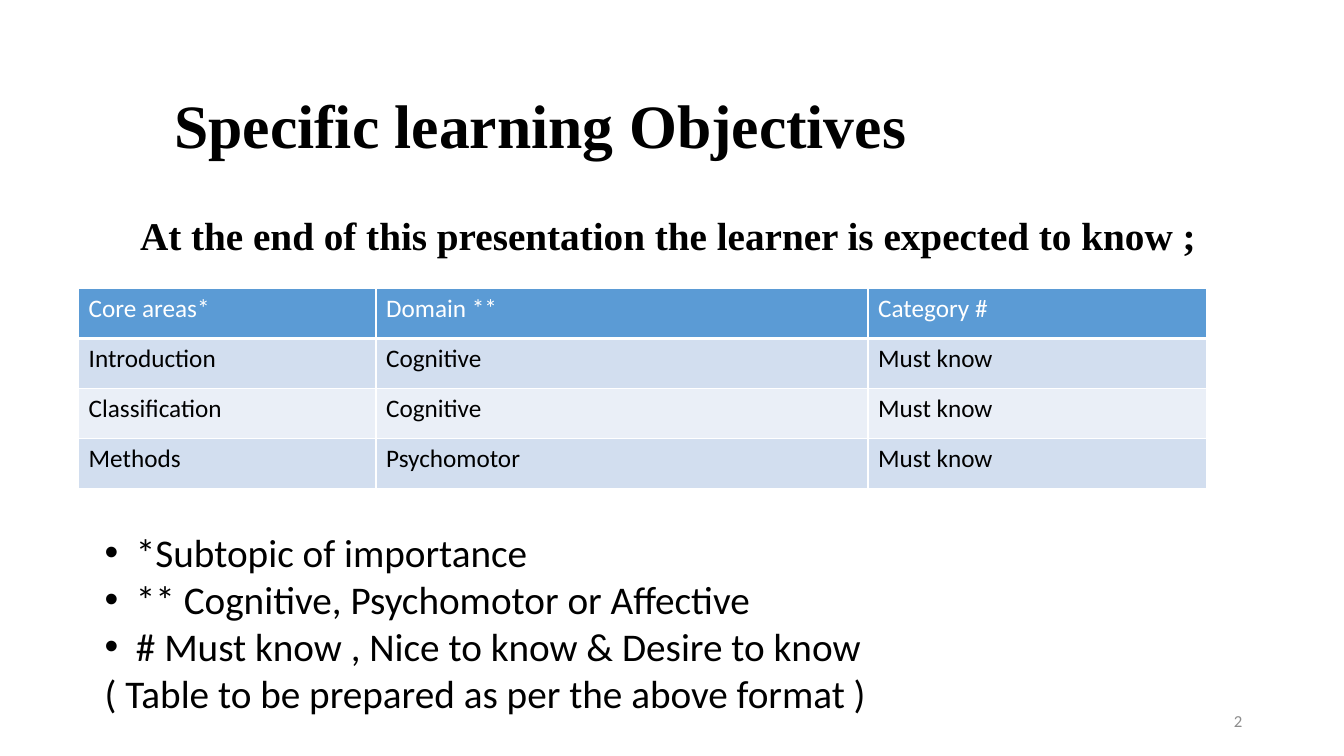
from lxml import etree
from pptx import Presentation
from pptx.dml.color import RGBColor
from pptx.enum import text
from pptx.oxml import ns
from pptx.util import Inches, Pt

BLACK = RGBColor(0x00, 0x00, 0x00)
WHITE = RGBColor(0xFF, 0xFF, 0xFF)
GREY = RGBColor(0x8C, 0x8C, 0x8C)
BLUE = RGBColor(0x5B, 0x9B, 0xD5)
BANDS = (RGBColor(0xD2, 0xDE, 0xEF), RGBColor(0xEA, 0xEF, 0xF7))

SERIF = "Times New Roman"
SANS = "Calibri"
MID = text.MSO_ANCHOR.MIDDLE
TOP = text.MSO_ANCHOR.TOP

WIDTHS = (2.95, 4.88, 3.36)
ROWS = (
    ("Core areas*", "Domain **", "Category #"),
    ("Introduction", "Cognitive", "Must know"),
    ("Classification", "Cognitive", "Must know"),
    ("Methods", "Psychomotor", "Must know"),
)
NOTES = (
    "*Subtopic of importance",
    "** Cognitive, Psychomotor or Affective",
    "# Must know , Nice to know & Desire to know",
)
CLOSE = "( Table to be prepared as per the above format )"


def style(para, size, name=SANS, color=BLACK, bold=False):
    for key, value in {"size": Pt(size), "name": name, "bold": bold}.items():
        setattr(para.font, key, value)
    para.font.color.rgb = color


def add_text(slide, box, lines, anchor=TOP, bullets=0, look=None, form=None):
    """Place a text box; the first `bullets` lines get a bullet."""
    shape = slide.shapes.add_textbox(*map(Inches, box))
    frame = shape.text_frame
    frame.word_wrap = True
    frame.vertical_anchor = anchor
    for i, line in enumerate(lines):
        para = frame.paragraphs[0] if i == 0 else frame.add_paragraph()
        para.text = line
        if i < bullets:
            props = para._p.get_or_add_pPr()
            props.set("marL", str(Inches(0.31)))
            props.set("indent", str(-Inches(0.31)))
            etree.SubElement(props, ns.qn("a:buFont"), typeface="Arial")
            etree.SubElement(props, ns.qn("a:buChar"), char="•")
        for key, value in (form or {}).items():
            setattr(para, key, value)
        style(para, **look)


def add_edges(cell, head):
    """Rule a cell in white, thicker where the header meets the body."""
    props = cell._tc.get_or_add_tcPr()
    for i, side in enumerate(("lnL", "lnR", "lnT", "lnB")):
        thick = side == "lnB" and head
        line = etree.Element(ns.qn(f"a:{side}"), w=str(Pt(3 if thick else 1)))
        fill = etree.SubElement(line, ns.qn("a:solidFill"))
        etree.SubElement(fill, ns.qn("a:srgbClr"), val=str(WHITE))
        props.insert(i, line)


def add_grid(slide, box):
    frame = slide.shapes.add_table(len(ROWS), len(WIDTHS), *map(Inches, box))
    grid = frame.table
    for col, width in zip(grid.columns, WIDTHS):
        col.width = Inches(width)
    for r, row in enumerate(ROWS):
        head = r == 0
        for c, word in enumerate(row):
            cell = grid.cell(r, c)
            cell.text = word
            cell.fill.solid()
            cell.fill.fore_color.rgb = BLUE if head else BANDS[(r - 1) % 2]
            style(cell.text_frame.paragraphs[0], 18,
                  color=WHITE if head else BLACK)
            add_edges(cell, head)


def add_goals(deck):
    slide = deck.slides.add_slide(deck.slide_layouts[6])
    # Title and lead-in
    add_text(slide, (1.63, 0.67, 10.13, 1.21), ["Specific learning Objectives"],
             anchor=MID, look={"size": 44, "name": SERIF, "bold": True},
             form={"line_spacing": 0.9})
    add_text(slide, (1.29, 2.05, 10.71, 0.57),
             ["At the end of this presentation the learner is expected to know ;"],
             look={"size": 28, "name": SERIF, "bold": True})
    # Table of objectives
    add_grid(slide, (0.78, 2.86, sum(WIDTHS), 1.99))
    # Key to the marks
    add_text(slide, (0.94, 5.19, 9.06, 1.99), [*NOTES, CLOSE],
             bullets=len(NOTES), look={"size": 28})
    # Slide number
    add_text(slide, (9.42, 6.95, 3, 0.4), ["2"], anchor=MID,
             look={"size": 12, "color": GREY},
             form={"alignment": text.PP_ALIGN.RIGHT})


def main():
    deck = Presentation()
    deck.slide_width = Inches(13.33)
    deck.slide_height = Inches(7.5)
    add_goals(deck)
    deck.save("out.pptx")


if __name__ == "__main__":
    main()
